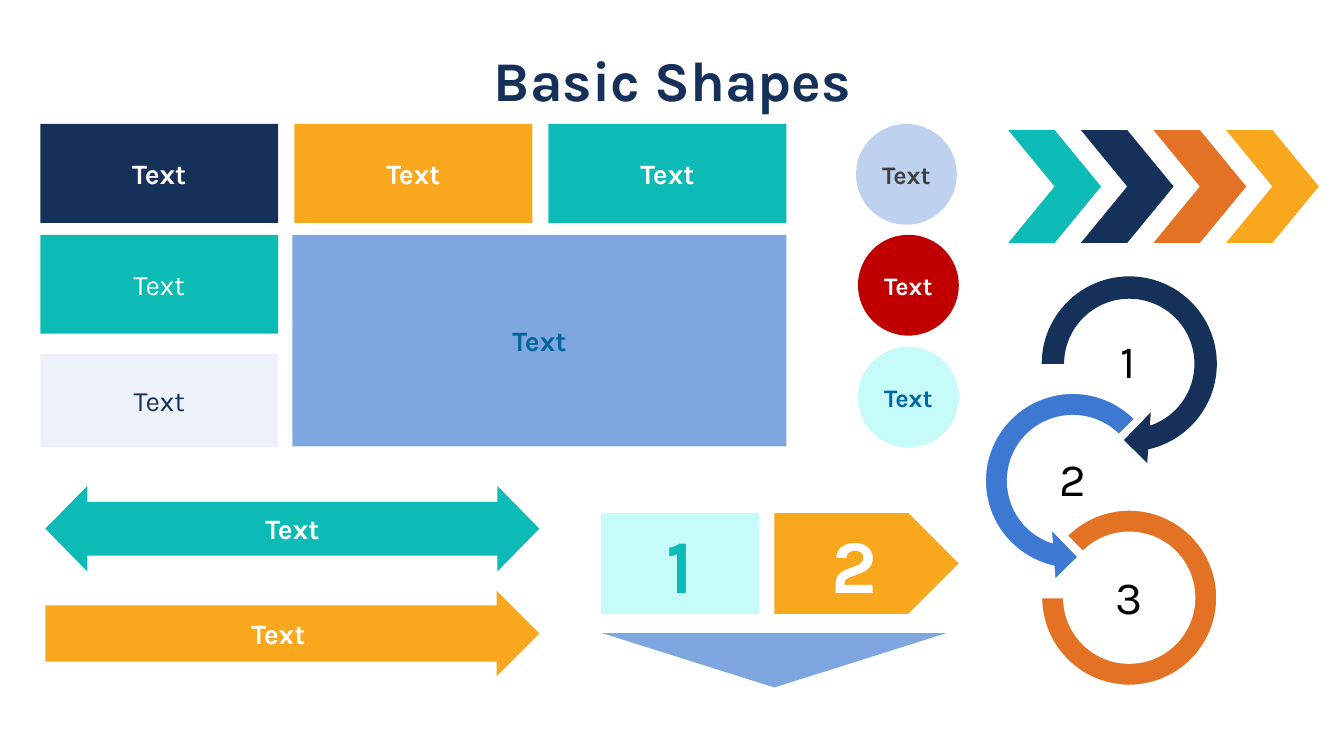
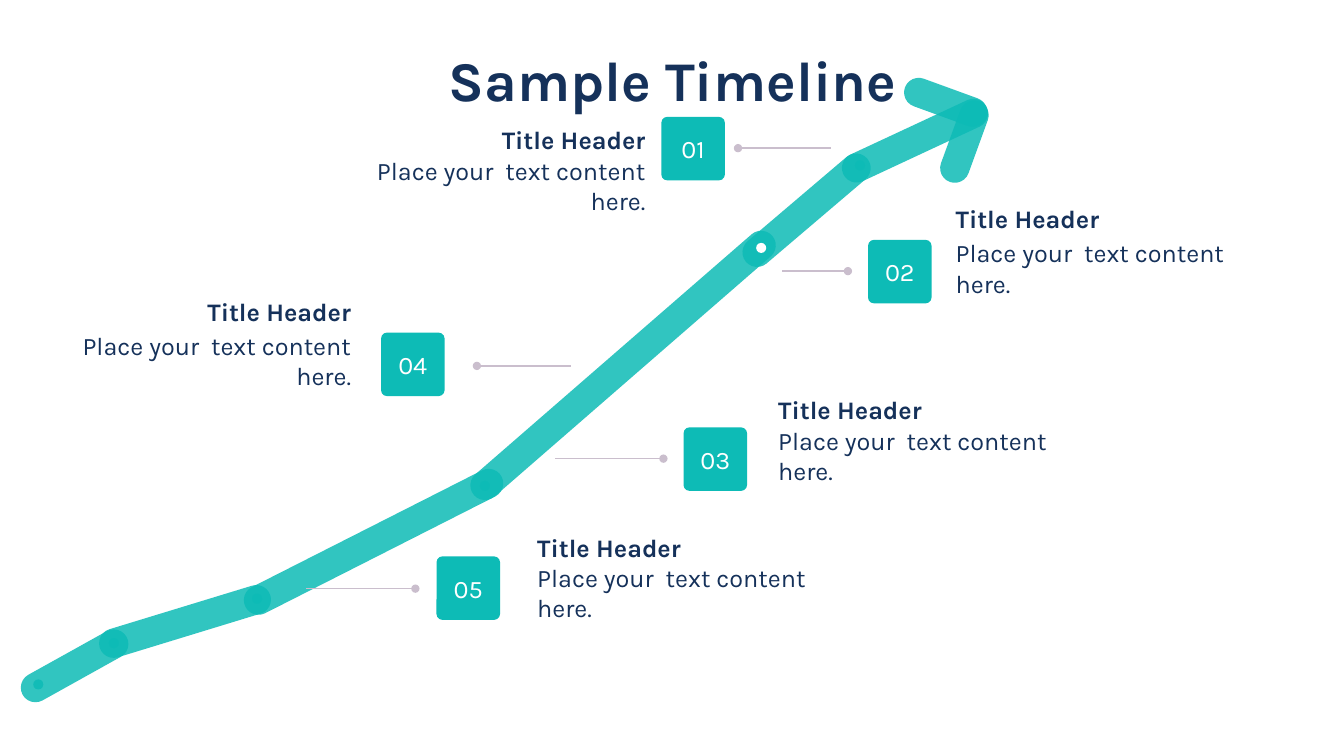
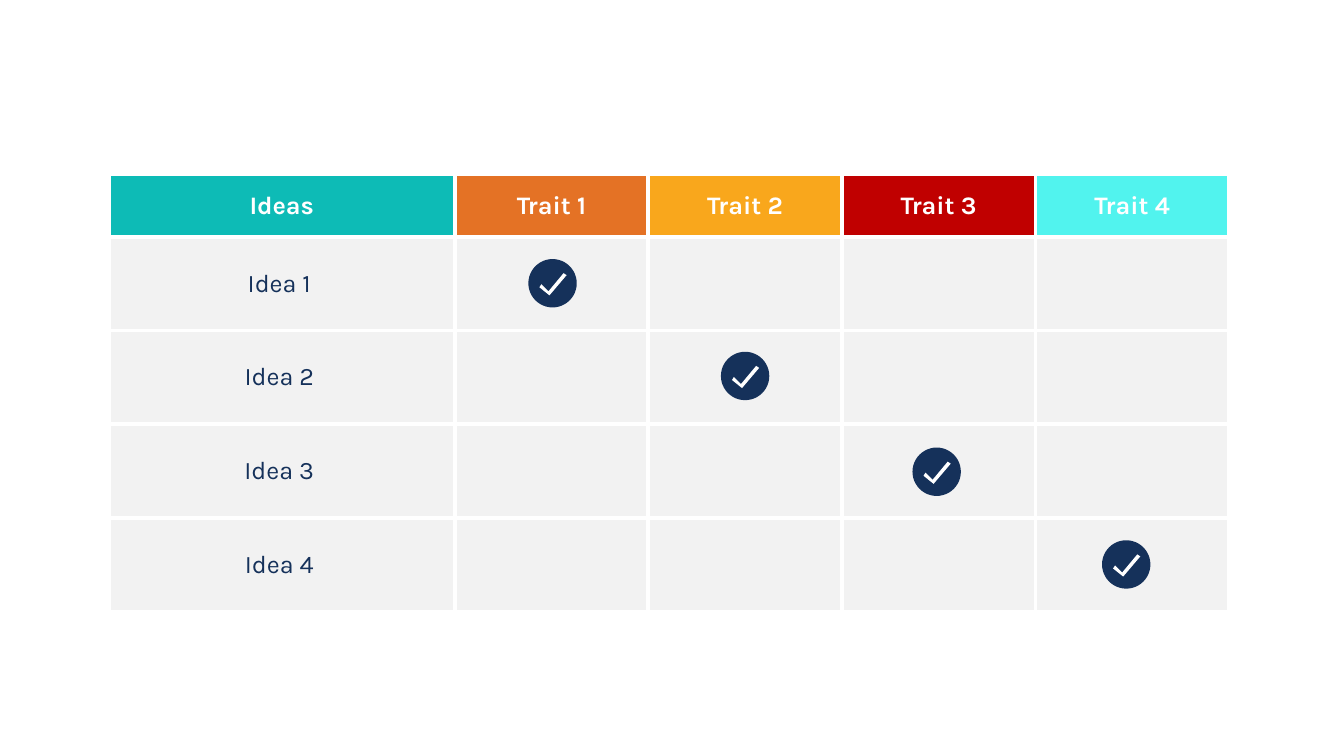
from lxml import etree
from pptx import Presentation
from pptx.dml.color import RGBColor
from pptx.enum.shapes import MSO_CONNECTOR, MSO_SHAPE
from pptx.enum.text import MSO_ANCHOR, PP_ALIGN
from pptx.oxml.ns import qn
from pptx.util import Inches, Pt

ROUND = MSO_SHAPE.ROUNDED_RECTANGLE
TAB = MSO_SHAPE.ROUND_2_SAME_RECTANGLE
RECT = MSO_SHAPE.RECTANGLE
OVAL = MSO_SHAPE.OVAL
RIGHT_ARROW = MSO_SHAPE.RIGHT_ARROW
TWO_ARROW = MSO_SHAPE.LEFT_RIGHT_ARROW
PLATE = MSO_SHAPE.PENTAGON
CHEVRON = MSO_SHAPE.CHEVRON
WEDGE = MSO_SHAPE.ISOSCELES_TRIANGLE
TURN = MSO_SHAPE.CIRCULAR_ARROW
LEFT_TURN = MSO_SHAPE.LEFT_CIRCULAR_ARROW
ARC = MSO_SHAPE.BLOCK_ARC
STRAIGHT = MSO_CONNECTOR.STRAIGHT
MIDDLE, TOP = MSO_ANCHOR.MIDDLE, MSO_ANCHOR.TOP
LEFT, CENTER, RIGHT = PP_ALIGN.LEFT, PP_ALIGN.CENTER, PP_ALIGN.RIGHT

FONT = "Karla"
HEX = {
    "navy": "15315A", "teal": "0DBBB6", "gold": "F9A71C", "orange": "E47225",
    "red": "C00000", "aqua": "51F3EE", "mint": "C5FBF9", "sky": "7EA6E1",
    "pale": "BED2F0", "blue": "3D79D2", "ink": "006699", "deep": "0066A4",
    "dark": "404040", "black": "000000", "white": "FFFFFF", "gray": "F2F2F2",
    "mauve": "CABECD",
}
RGB = {name: RGBColor.from_string(code) for name, code in HEX.items()}


def draw(slide, kind, at, fill, adjust=(), turn=0, alpha=100):
    shape = slide.shapes.add_shape(kind, *map(Inches, at))
    shape.shadow.inherit = False
    shape.fill.solid()
    shape.fill.fore_color.rgb = RGB[fill]
    shape.line.fill.background()
    shape.rotation = turn
    for i, value in enumerate(adjust):
        shape.adjustments[i] = value
    if alpha < 100:
        color = shape.element.spPr.find(qn("a:solidFill")).find(qn("a:srgbClr"))
        etree.SubElement(color, qn("a:alpha"), val=str(alpha * 1000))
    return shape


def write(frame, words, size, color, bold=False, align=CENTER, anchor=MIDDLE, inset=0):
    frame.text = words
    frame.word_wrap = True
    frame.vertical_anchor = anchor
    if inset is not None:
        frame.margin_left = frame.margin_right = Inches(inset)
        frame.margin_top = frame.margin_bottom = Inches(inset)
    par = frame.paragraphs[0]
    par.alignment = align
    font = par.runs[0].font
    font.name, font.size, font.bold = FONT, Pt(size), bold
    font.color.rgb = RGB[color]
    return par


deck = Presentation()
deck.slide_width, deck.slide_height = Inches(13.33), Inches(7.5)
basic, trend, grid = [deck.slides.add_slide(deck.slide_layouts[6]) for _ in range(3)]

for slide, title in ((basic, "Basic Shapes"), (trend, "Sample Timeline")):
    box = slide.shapes.add_textbox(Inches(0.92), Inches(0.25), Inches(11.5), Inches(1.15))
    write(box.text_frame, title, 40, "navy", True, inset=None).line_spacing = 0.9

labels = [
    (ROUND, (0.4, 1.23, 2.36, 0.98), "navy", [0], 100, "Text", 20, "white", True),
    (ROUND, (2.92, 1.23, 2.36, 0.98), "gold", [0], 100, "Text", 20, "white", True),
    (ROUND, (5.44, 1.23, 2.36, 0.98), "teal", [0], 100, "Text", 20, "white", True),
    (ROUND, (2.9, 2.33, 4.9, 2.1), "sky", [0], 100, "Text", 20, "ink", True),
    (TAB, (0.4, 3.51, 2.36, 0.93), "pale", [0, 0], 27, "Text", 20, "navy", False),
    (TAB, (0.4, 2.33, 2.36, 0.98), "teal", [0, 0], 100, "Text", 20, "white", False),
    (RIGHT_ARROW, (0.45, 5.86, 4.9, 0.85), "gold", [0.655, 0.5], 100, "Text", 20, "white", True),
    (TWO_ARROW, (0.45, 4.82, 4.9, 0.85), "teal", [0.628, 0.491], 100, "Text", 20, "white", True),
    (RECT, (5.96, 5.09, 1.57, 1), "mint", [], 100, "1", 54, "teal", True),
    (PLATE, (7.68, 5.09, 1.83, 1), "gold", [], 100, "2", 54, "white", True),
    (OVAL, (8.49, 1.23, 1, 1), "pale", [], 100, "Text", 18, "dark", True),
    (OVAL, (8.51, 2.33, 1, 1), "red", [], 100, "Text", 18, "white", True),
    (OVAL, (8.51, 3.44, 1, 1), "mint", [], 100, "Text", 18, "deep", True),
]
for kind, at, fill, adjust, alpha, words, size, color, bold in labels:
    shape = draw(basic, kind, at, fill, adjust, alpha=alpha)
    write(shape.text_frame, words, size, color, bold)

draw(basic, WEDGE, (5.97, 6.28, 3.42, 0.54), "sky", turn=180)
for i, fill in enumerate(("teal", "navy", "orange", "gold")):
    draw(basic, CHEVRON, (10 + 0.72 * i, 1.29, 0.92, 1.12), fill)

loops = [
    (TURN, (10.19, 2.6, 2.02, 2.02), "navy", [0.11, 11.42, 45, 108, 0.125], (10.63, 3.33)),
    (LEFT_TURN, (9.63, 3.76, 2.02, 2.02), "blue", [0.11, 11.42, 63, 189, 0.125], (10.08, 4.5)),
    (ARC, (10.33, 5.06, 1.74, 1.74), "orange", [135, 108, 0.127], (10.64, 5.67)),
]
for i, (kind, at, fill, adjust, (x, y)) in enumerate(loops):
    shape = draw(basic, kind, at, fill, adjust)
    if i:
        shape.line.color.rgb = RGB["white"]
        shape.line.width = Pt(1)
    box = basic.shapes.add_textbox(Inches(x), Inches(y), Inches(1.12), Inches(0.56))
    write(box.text_frame, str(i + 1), 33, "black", inset=0.02).line_spacing = 0.9

bars = [
    (0.15, 6.46, 1.18, 330.9), (0.95, 6.02, 1.77, 343), (2.28, 5.23, 2.85, 333.1),
    (4.22, 3.48, 3.92, 319), (7.21, 1.94, 1.58, 319.6), (8.29, 1.25, 1.57, 335),
    (9.14, 1.26, 0.85, 290), (8.95, 0.87, 0.86, 20),
]
for x, y, width, turn in bars:
    draw(trend, ROUND, (x, y, width, 0.29), "teal", [0.5], turn, 85)
dots = [(0.33, 6.74), (1.08, 6.33), (2.5, 5.89), (4.76, 4.77), (8.48, 1.59)]
for x, y in dots:
    draw(trend, OVAL, (x, y, 0.1, 0.1), "teal", alpha=85)
draw(trend, OVAL, (7.5, 2.41, 0.1, 0.1), "white")

steps = [
    ("01", 6.56, 1.16, 7.32, 8.24, 1.47, 3.56, 1.18, 1.49, RIGHT),
    ("02", 8.61, 2.38, 8.41, 7.76, 2.69, 9.38, 1.97, 2.31, LEFT),
    ("03", 6.78, 4.24, 6.58, 5.5, 4.55, 7.62, 3.86, 4.17, LEFT),
    ("04", 3.78, 3.3, 4.73, 5.66, 3.63, 0.64, 2.89, 3.23, RIGHT),
    ("05", 4.33, 5.52, 4.12, 3.04, 5.84, 5.23, 5.23, 5.53, LEFT),
]
for mark, x, y, start, end, level, left, head, body, align in steps:
    line = trend.shapes.add_connector(
        STRAIGHT, Inches(start), Inches(level), Inches(end), Inches(level))
    line.line.color.rgb = RGB["mauve"]
    line.line.width = Pt(1)
    etree.SubElement(line.line._get_or_add_ln(), qn("a:headEnd"), type="oval")
    etree.SubElement(line.element.spPr, qn("a:effectLst"))
    tile = draw(trend, ROUND, (x, y, 0.63, 0.63), "teal", [0.093])
    write(tile.text_frame, mark, 18, "white")
    parts = (("Title Header", head, 0.34, True),
             ("Place your  text content here.", body, 1.06, False))
    for words, top, height, bold in parts:
        box = trend.shapes.add_textbox(Inches(left), Inches(top), Inches(2.94), Inches(height))
        write(box.text_frame, words, 18, "navy", bold, align, TOP, None)

heads = [("Ideas", "teal"), ("Trait 1", "orange"), ("Trait 2", "gold"),
         ("Trait 3", "red"), ("Trait 4", "aqua")]
table = grid.shapes.add_table(
    5, 5, Inches(1.08), Inches(1.73), Inches(11.11), Inches(4.34)).table
table.horz_banding = False
for c in range(5):
    table.columns[c].width = Inches(1.92 if c else 3.43)
for r in range(5):
    table.rows[r].height = Inches(0.93 if r else 0.62)
    for c, (head, fill) in enumerate(heads):
        cell = table.cell(r, c)
        props = cell._tc.get_or_add_tcPr()
        for side in ("a:lnL", "a:lnR", "a:lnT", "a:lnB"):
            edge = etree.SubElement(props, qn(side), w=str(Pt(3)))
            paint = etree.SubElement(edge, qn("a:solidFill"))
            etree.SubElement(paint, qn("a:srgbClr"), val=HEX["white"])
        cell.fill.solid()
        cell.fill.fore_color.rgb = RGB["gray" if r else fill]
        cell.vertical_anchor = MIDDLE
        if r == 0:
            cell.margin_left = cell.margin_right = Inches(0.07)
            cell.margin_top = cell.margin_bottom = Inches(0.03)
            write(cell.text_frame, head, 18, "white", True, inset=None)
        elif c == 0:
            cell.margin_left, cell.margin_right = 0, Inches(0.05)
            cell.margin_top = cell.margin_bottom = Inches(0.02)
            write(cell.text_frame, f"Idea {r}", 18, "navy", inset=None)

tick = [(0.35, 0.14), (0.38, 0.16), (0.21, 0.36), (0.11, 0.28), (0.13, 0.25), (0.2, 0.32)]
for x, y in ((5.24, 2.57), (7.15, 3.49), (9.05, 4.44), (10.93, 5.36)):
    draw(grid, OVAL, (x, y, 0.48, 0.48), "navy")
    points = [(Inches(x + dx), Inches(y + dy)) for dx, dy in tick]
    path = grid.shapes.build_freeform(*points[0])
    path.add_line_segments(points[1:])
    check = path.convert_to_shape()
    check.shadow.inherit = False
    check.fill.solid()
    check.fill.fore_color.rgb = RGB["white"]
    check.line.fill.background()

deck.save("out.pptx")
